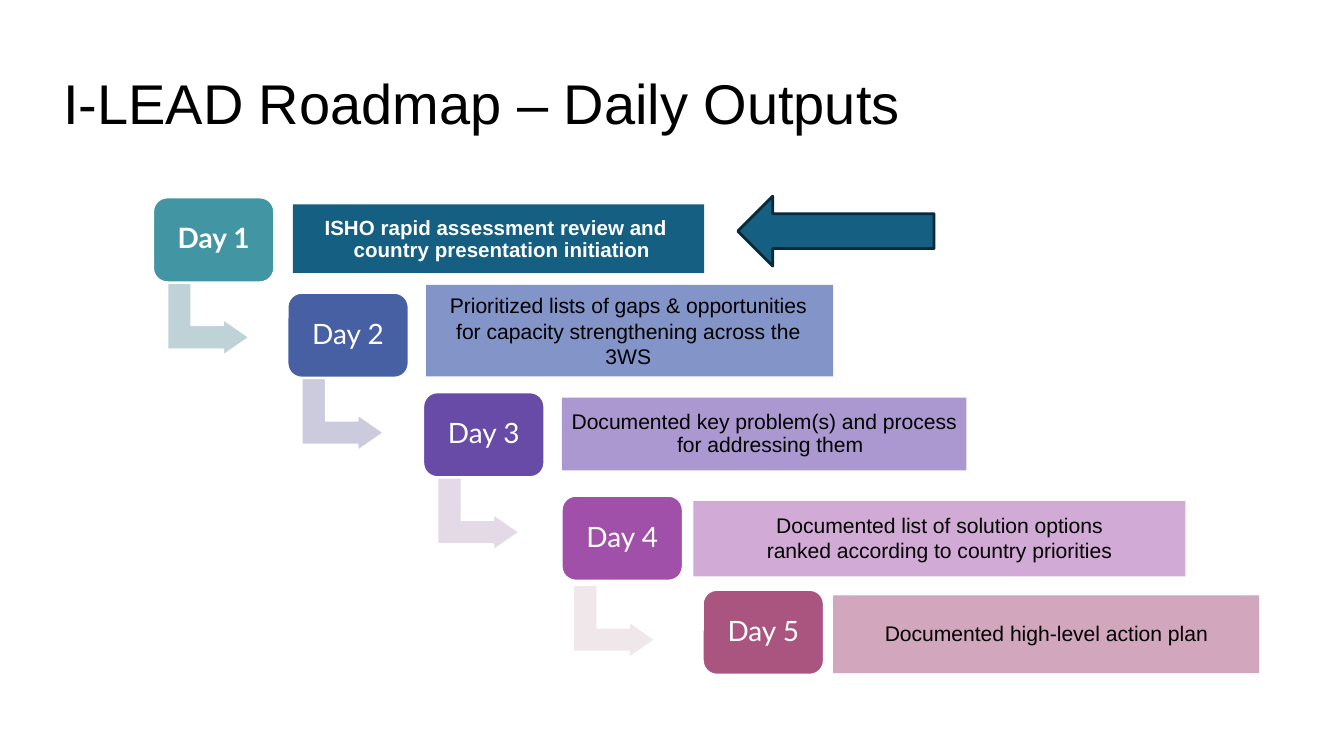
from dataclasses import dataclass

from pptx import Presentation
from pptx.dml.color import RGBColor
from pptx.enum.shapes import MSO_SHAPE
from pptx.enum.text import MSO_ANCHOR, MSO_AUTO_SIZE, PP_ALIGN
from pptx.util import Inches, Pt

RECTANGLE = MSO_SHAPE.RECTANGLE
ROUNDED = MSO_SHAPE.ROUNDED_RECTANGLE
BENT_ARROW = MSO_SHAPE.BENT_UP_ARROW
LEFT_ARROW = MSO_SHAPE.LEFT_ARROW
MIDDLE = MSO_ANCHOR.MIDDLE
NO_FIT = MSO_AUTO_SIZE.NONE
CENTER = PP_ALIGN.CENTER
LEFT = PP_ALIGN.LEFT

TITLE_ONLY = 5
BADGE_SIZE = (0.9, 0.63)
BEND_SIZE = (0.54, 0.61)
BEND_ADJUSTMENTS = (0.33, 0.25, 0.36)

COLORS = {
    "white": "FFFFFF", "black": "000000",
    "pointer": "156082", "pointer_line": "092A39",
    "badge_1": "4295A2", "output_1": "156082", "bend_1": "BED2D7",
    "badge_2": "4760A3", "output_2": "8294C8", "bend_2": "CCCBDE",
    "badge_3": "684BA6", "output_3": "AB98D0", "bend_3": "E4D9E7",
    "badge_4": "A050A8", "output_4": "D2AAD6", "bend_4": "F0E7EA",
    "badge_5": "AA557F", "output_5": "D2A6BC",
}


@dataclass
class Day:
    """One step of the roadmap, with positions in inches."""
    badge: tuple
    output: tuple
    lines: tuple
    bend_offset: tuple = (0.14, 0.6)
    hanging: float = 0.09
    insets: tuple = (0.05, 0.05, 0.05, 0.05)
    spacing: float = 0.9
    size: float = 11.25
    current: bool = False


DAYS = (
    Day((1.14, 1.47), (2.18, 1.52, 3.06, 0.51),
        ("ISHO rapid assessment review and country presentation initiation",),
        insets=(0.05, 0.07, 0.09, 0.05), size=11, current=True),
    Day((2.14, 2.18), (3.17, 2.12, 3.03, 0.68),
        ("Prioritized lists of gaps & opportunities for capacity "
         "strengthening across the 3WS",),
        hanging=0, insets=(0.07, 0.05, 0.09, 0.05), spacing=1),
    Day((3.15, 2.92), (4.18, 2.96, 3.01, 0.54),
        ("Documented key problem(s) and process for addressing them",)),
    Day((4.18, 3.69), (5.16, 3.73, 3.66, 0.56),
        ("Documented list of solution options",
         "ranked according to country priorities"),
        bend_offset=(0.12, 0.63), hanging=0.07),
    Day((5.23, 4.39), (6.2, 4.43, 3.17, 0.58),
        ("Documented high-level action plan",)),
)


def color(name):
    """Return the named colour."""
    return RGBColor.from_string(COLORS[name])


def add_block(slide, kind, box, fill, line=None, line_width=1, adjustments=()):
    """Add a flat filled shape in a box of left, top, width and height."""
    shape = slide.shapes.add_shape(kind, *map(Inches, box))
    shape.shadow.inherit = False
    shape.fill.solid()
    shape.fill.fore_color.rgb = color(fill)
    if line:
        shape.line.color.rgb = color(line)
        shape.line.width = Pt(line_width)
    else:
        shape.line.fill.background()
    for index, value in enumerate(adjustments):
        shape.adjustments[index] = value
    return shape


def set_insets(frame, insets):
    """Set the left, top, right and bottom insets of a text frame."""
    (frame.margin_left, frame.margin_top,
     frame.margin_right, frame.margin_bottom) = map(Inches, insets)


def write_lines(shape, lines, font, size, text_color, bold=False,
                insets=(0.06, 0.06, 0.06, 0.06), spacing=0.9, hanging=0):
    """Write centred paragraphs into a shape."""
    frame = shape.text_frame
    frame.word_wrap = True
    frame.vertical_anchor = MIDDLE
    set_insets(frame, insets)
    frame.text = "\n".join(lines)
    for index, paragraph in enumerate(frame.paragraphs):
        paragraph.alignment = CENTER
        paragraph.line_spacing = spacing
        if index:
            paragraph.space_before = Pt(1.3)
        if hanging:
            properties = paragraph._p.get_or_add_pPr()
            properties.set("marL", str(Inches(hanging)))
            properties.set("indent", str(-Inches(hanging)))
        paragraph.font.name = font
        paragraph.font.size = Pt(size)
        paragraph.font.bold = bold
        paragraph.font.color.rgb = color(text_color)


def add_title(slide, box, text):
    """Move, fill and format the title placeholder."""
    title = slide.shapes.title
    title.left, title.top, title.width, title.height = map(Inches, box)
    frame = title.text_frame
    frame.text = text
    frame.word_wrap = True
    frame.auto_size = NO_FIT
    frame.vertical_anchor = MIDDLE
    set_insets(frame, (0, 0, 0, 0))
    paragraph = frame.paragraphs[0]
    paragraph.alignment = LEFT
    paragraph.line_spacing = 0.8
    paragraph.font.name = "Arial"
    paragraph.font.size = Pt(30)
    paragraph.font.color.rgb = color("black")


def add_day(slide, number, day):
    """Add a day's bend to the next day, its badge and its output box."""
    left, top = day.badge
    if number < len(DAYS):
        shift_x, shift_y = day.bend_offset
        bend = add_block(slide, BENT_ARROW,
                         (left + shift_x, top + shift_y, *BEND_SIZE),
                         f"bend_{number}", "white",
                         adjustments=BEND_ADJUSTMENTS)
        bend.rotation = 90
    badge = add_block(slide, ROUNDED, (left, top, *BADGE_SIZE),
                      f"badge_{number}", "white")
    write_lines(badge, [f"Day {number}"], "Lato", 15, "white", day.current)
    output = add_block(slide, RECTANGLE, day.output, f"output_{number}")
    write_lines(output, day.lines, "Arial", day.size,
                "white" if day.current else "black", day.current,
                day.insets, day.spacing, day.hanging)


def main():
    """Build and save the roadmap slide."""
    presentation = Presentation()
    presentation.slide_width = Inches(10)
    presentation.slide_height = presentation.slide_width * 9 // 16
    slide = presentation.slides.add_slide(
        presentation.slide_layouts[TITLE_ONLY])
    add_title(slide, (0.47, 0.17, 7.8, 1.28), "I-LEAD Roadmap – Daily Outputs")
    for number, day in enumerate(DAYS, 1):
        add_day(slide, number, day)
    add_block(slide, LEFT_ARROW, (5.49, 1.46, 1.46, 0.52),
              "pointer", "pointer_line", 1.5)
    presentation.save("out.pptx")


if __name__ == "__main__":
    main()
